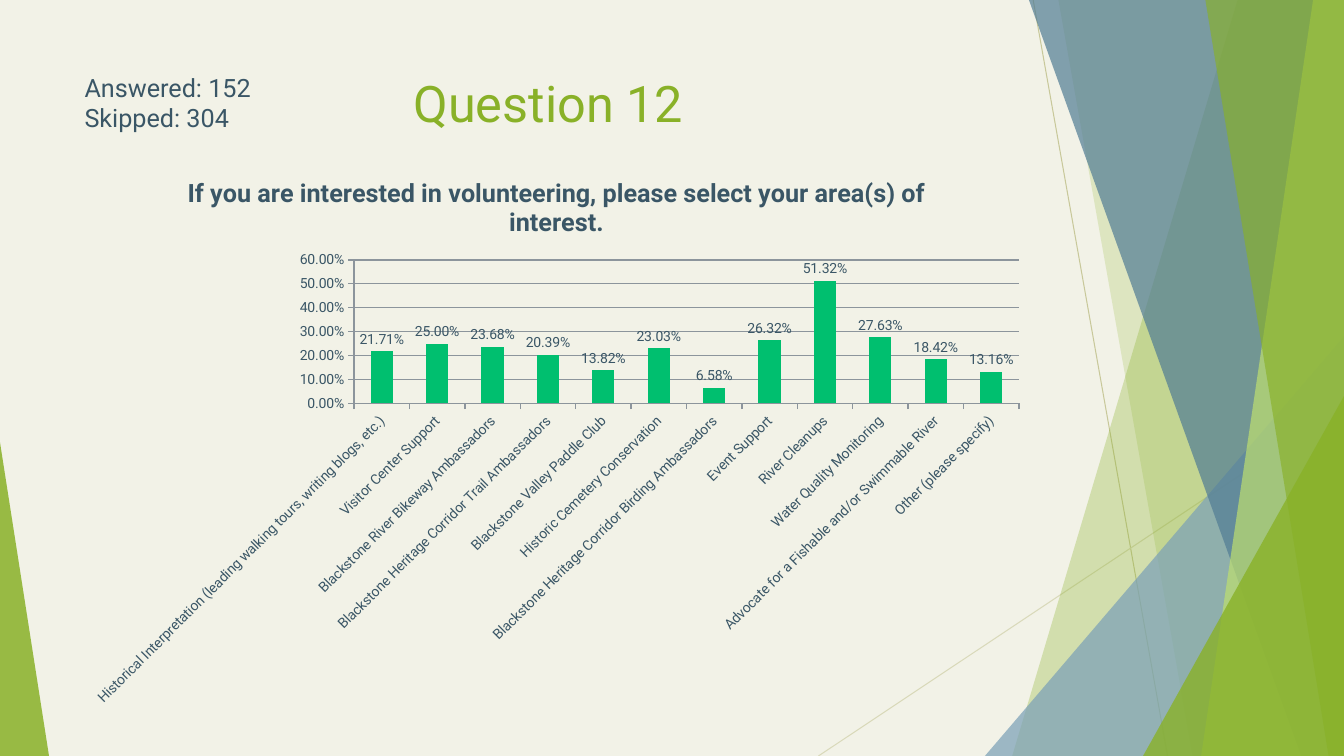
from lxml.etree import SubElement
from pptx import Presentation
from pptx.chart.data import CategoryChartData
from pptx.dml.color import RGBColor
from pptx.enum.chart import XL_CHART_TYPE, XL_LABEL_POSITION, XL_TICK_MARK
from pptx.enum.shapes import MSO_CONNECTOR, MSO_SHAPE
from pptx.enum.text import MSO_ANCHOR, PP_ALIGN
from pptx.oxml.ns import qn
from pptx.util import Pt

WIDE, HIGH = 960, 540
LEFT, TOP = 53.3, 48.2
FACE = "Roboto"
GREEN, SLATE, GRAY = "89B128", "3A5666", "8C959C"

# x at top left, x at bottom left, colour, opacity; each runs to the right edge
BACK = [(884, 723, GREEN, 30), (756, 852, GREEN, 20)]
FRONT = [(735, 929.5, "517C94", 70), (938, 858, "BEDF70", 70),
         (861, 949, GREEN, 65)]

AREAS = [
    ("Historical Interpretation (leading walking tours, writing blogs, etc.)",
     0.2171),
    ("Visitor Center Support", 0.25),
    ("Blackstone River Bikeway Ambassadors", 0.2368),
    ("Blackstone Heritage Corridor Trail Ambassadors", 0.2039),
    ("Blackstone Valley Paddle Club", 0.1382),
    ("Historic Cemetery Conservation", 0.2303),
    ("Blackstone Heritage Corridor Birding Ambassadors", 0.0658),
    ("Event Support", 0.2632),
    ("River Cleanups", 0.5132),
    ("Water Quality Monitoring", 0.2763),
    ("Advocate for a Fishable and/or Swimmable River", 0.1842),
    ("Other (please specify)", 0.1316),
]


def rgb(color):
    return RGBColor.from_string(color)


def style(font, size, color, bold=False):
    font.name, font.size, font.bold = FACE, Pt(size), bold
    font.color.rgb = rgb(color)


def paint(shape, color, alpha):
    """Fill a shape at an opacity in percent, without line or shadow."""
    shape.shadow.inherit = False
    shape.line.fill.background()
    shape.fill.solid()
    shape.fill.fore_color.rgb = rgb(color)
    tone = shape._element.spPr.find(qn("a:solidFill"))[0]
    SubElement(tone, qn("a:alpha"), val=str(alpha * 1000))


def add_line(slide, start, end, color):
    line = slide.shapes.add_connector(
        MSO_CONNECTOR.STRAIGHT, *map(Pt, start + end))
    line.line.color.rgb = rgb(color)
    line.line.width = Pt(0.75)
    SubElement(line._element.spPr, qn("a:effectLst"))


def add_band(slide, top, base, color, alpha):
    pen = slide.shapes.build_freeform(Pt(top), 0)
    pen.add_line_segments([(Pt(WIDE), 0), (Pt(WIDE), Pt(HIGH)),
                           (Pt(base), Pt(HIGH))], close=True)
    paint(pen.convert_to_shape(), color, alpha)


def add_wedge(slide, left, top, width, peak, color, alpha):
    """Add a triangle standing on the slide's lower edge."""
    wedge = slide.shapes.add_shape(
        MSO_SHAPE.ISOSCELES_TRIANGLE,
        Pt(left), Pt(top), Pt(width), Pt(HIGH - top))
    wedge.adjustments[0] = peak
    paint(wedge, color, alpha)


def add_decor(slide):
    add_line(slide, (738, 0), (834, HIGH), "C8C89A")
    add_line(slide, (WIDE, 290), (584.6, HIGH), "D9D9B9")
    for band in BACK:
        add_band(slide, *band)
    add_wedge(slide, 703.5, 240, 256.5, 1, "7BA1B7", 72)
    for band in FRONT:
        add_band(slide, *band)
    add_wedge(slide, 816.5, 283, 143.5, 1, GREEN, 80)
    add_wedge(slide, 0, 316, 35, 0, GREEN, 85)


def set_title(slide, text):
    title = slide.shapes.title
    slide.shapes._spTree.append(title._element)
    title.left, title.top = Pt(LEFT), Pt(TOP)
    title.width, title.height = Pt(676.8), Pt(103.7)
    frame = title.text_frame
    frame.text = text
    frame.vertical_anchor = MSO_ANCHOR.TOP
    frame.paragraphs[0].alignment = PP_ALIGN.CENTER
    style(frame.paragraphs[0].runs[0].font, 36, GREEN)


def add_note(slide, text):
    box = slide.shapes.add_textbox(Pt(LEFT), Pt(TOP), Pt(137.5), Pt(51))
    box.text_frame.word_wrap = True
    box.text_frame.text = text
    for para in box.text_frame.paragraphs:
        style(para.runs[0].font, 18, SLATE)


def set_plot(chart, **sides):
    """Place the inner plot area, as fractions of the chart."""
    plot = chart._chartSpace.chart.plotArea
    for old in plot.findall(qn("c:layout")):
        plot.remove(old)
    layout = SubElement(plot, qn("c:layout"))
    plot.insert(0, layout)
    manual = SubElement(layout, qn("c:manualLayout"))
    SubElement(manual, qn("c:layoutTarget"), val="inner")
    for side in "xy":
        SubElement(manual, qn(f"c:{side}Mode"), val="edge")
    for side, part in sides.items():
        SubElement(manual, qn(f"c:{side}"), val=str(part))


def set_axis(axis):
    axis.major_tick_mark = XL_TICK_MARK.OUTSIDE
    axis.minor_tick_mark = XL_TICK_MARK.NONE
    axis.format.line.color.rgb = rgb(GRAY)
    axis.format.line.width = Pt(1)
    style(axis.tick_labels.font, 10, SLATE)


def add_bars(slide, heading):
    data = CategoryChartData(number_format="0.00%")
    data.categories = [name for name, share in AREAS]
    data.add_series("Series 1", [share for name, share in AREAS])
    chart = slide.shapes.add_chart(
        XL_CHART_TYPE.COLUMN_CLUSTERED,
        Pt(LEFT), Pt(110.9), Pt(688.3), Pt(393.8), data).chart
    style(chart.font, 10, SLATE)
    chart.has_legend = False
    chart.has_title = True
    frame = chart.chart_title.text_frame
    frame.text = heading
    style(frame.paragraphs[0].runs[0].font, 18, SLATE, True)
    chart.chart_title.include_in_layout = False
    set_plot(chart, x=0.29, y=0.19, w=0.69, h=0.26)

    cats, vals = chart.category_axis, chart.value_axis
    set_axis(cats)
    set_axis(vals)
    cats._element.find(qn("c:txPr"))[0].set("rot", "-2700000")
    vals.minimum_scale, vals.maximum_scale, vals.major_unit = 0, 0.6, 0.1
    vals.tick_labels.number_format = "0.00%"
    vals.tick_labels.number_format_is_linked = False
    vals.major_gridlines.format.line.color.rgb = rgb(GRAY)
    vals.major_gridlines.format.line.width = Pt(1)

    plot = chart.plots[0]
    plot.gap_width = 150
    plot.vary_by_categories = False
    fill = plot.series[0].format.fill
    fill.solid()
    fill.fore_color.rgb = rgb("00BF6F")
    labels = plot.series[0].data_labels
    labels.show_value = True
    labels.position = XL_LABEL_POSITION.OUTSIDE_END
    labels.number_format = "0.00%"
    labels.number_format_is_linked = False
    style(labels.font, 10, SLATE)


def main():
    deck = Presentation()
    deck.slide_width, deck.slide_height = Pt(WIDE), Pt(HIGH)
    slide = deck.slides.add_slide(deck.slide_layouts[5])
    slide.background.fill.solid()
    slide.background.fill.fore_color.rgb = rgb("F2F2E7")
    add_decor(slide)
    set_title(slide, "Question 12")
    add_bars(slide, "If you are interested in volunteering, "
                    "please select your area(s) of interest.")
    add_note(slide, "Answered: 152\nSkipped: 304")
    deck.save("out.pptx")


if __name__ == "__main__":
    main()
